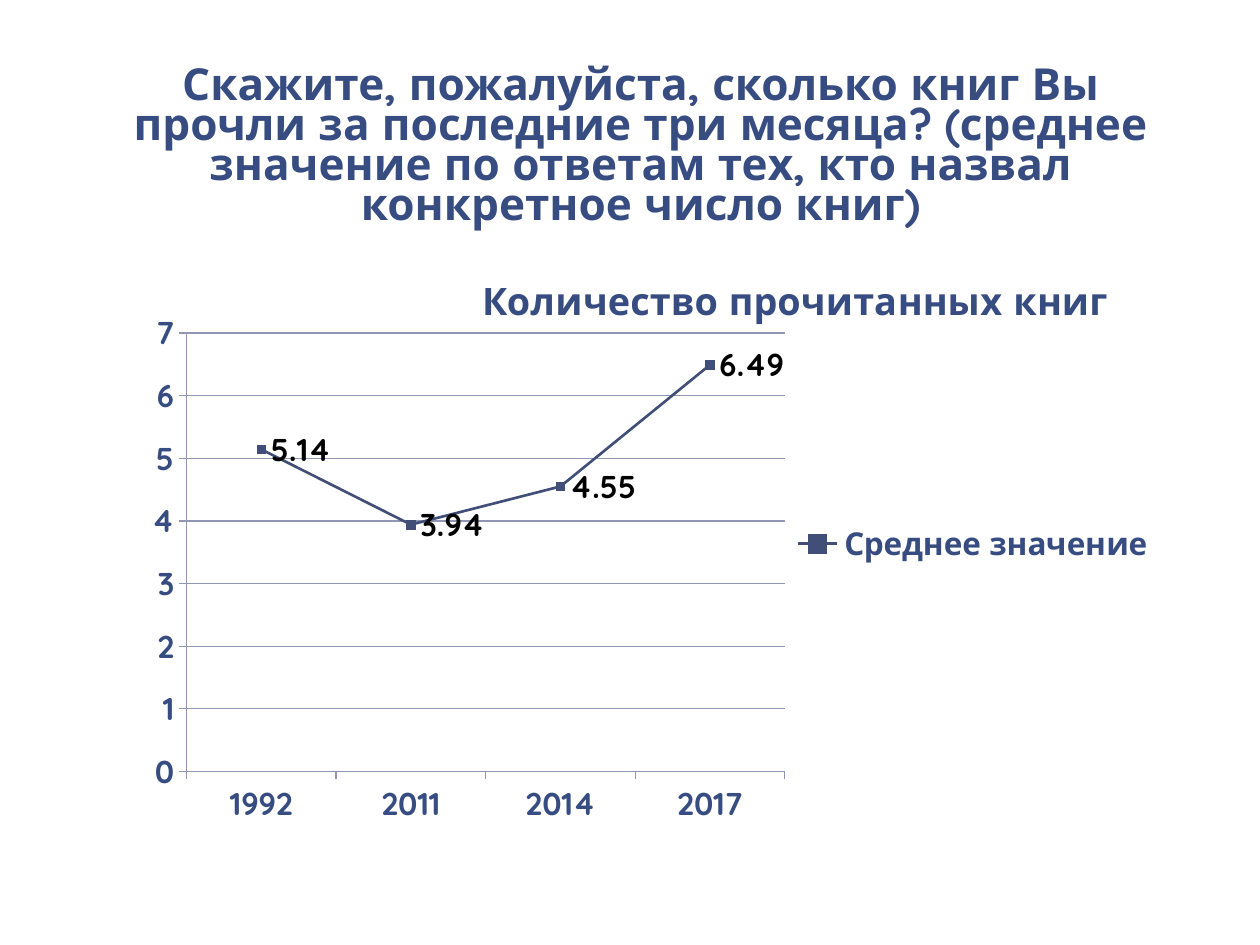
from dataclasses import dataclass

from lxml import etree
from pptx import Presentation
from pptx.chart.data import CategoryChartData
from pptx.dml.color import RGBColor
from pptx.enum import chart as chart_enum, text as text_enum
from pptx.oxml import ns
from pptx.util import Inches, Pt


@dataclass(frozen=True)
class Theme:
    font: str = "Quicksand"
    heading: str = "374C81"
    series: str = "414E77"
    grid: str = "9096B4"
    label: str = "000000"
    background: str = "FFFFFF"
    title_size: float = 25.2
    chart_title_size: float = 21.6
    chart_size: float = 18


THEME = Theme()


def format_font(font, size=THEME.chart_size, color=THEME.heading, bold=True):
    font.name = THEME.font
    font.size = Pt(size)
    font.bold = bold
    font.color.rgb = RGBColor.from_string(color)


def write_text(frame, content, align=text_enum.PP_ALIGN.CENTER, spacing=None, **font_format):
    paragraph = frame.paragraphs[0]
    paragraph.alignment = align
    paragraph.line_spacing = spacing
    run = paragraph.add_run()
    run.text = content
    format_font(run.font, **font_format)


def format_line(line, color, width):
    line.color.rgb = RGBColor.from_string(color)
    line.width = Pt(width)


def set_layout(parent, successor_tags, **values):
    """Place a chart part by fractions of the chart area."""
    for old in parent.findall(ns.qn("c:layout")):
        parent.remove(old)
    layout = etree.Element(ns.qn("c:layout"))
    manual = etree.SubElement(layout, ns.qn("c:manualLayout"))
    for tag, value in values.items():
        etree.SubElement(manual, ns.qn(f"c:{tag}")).set("val", str(value))
    successors = [child for child in parent
                  if child.tag in [ns.qn(tag) for tag in successor_tags]]
    successors[0].addprevious(layout)


def add_title(slide, content):
    title = slide.shapes.title
    title.left, title.top = Inches(0.92), Inches(0.55)
    title.width, title.height = Inches(8.33), Inches(1.33)
    frame = title.text_frame
    frame.word_wrap = True
    frame.auto_size = text_enum.MSO_AUTO_SIZE.NONE
    frame.vertical_anchor = text_enum.MSO_ANCHOR.BOTTOM
    frame.margin_left = frame.margin_right = Inches(0.13)
    frame.margin_top = frame.margin_bottom = Inches(0.07)
    write_text(frame, content, spacing=0.75, size=THEME.title_size)


def format_axis(axis):
    axis.major_tick_mark = chart_enum.XL_TICK_MARK.OUTSIDE
    axis.minor_tick_mark = chart_enum.XL_TICK_MARK.NONE
    format_font(axis.tick_labels.font)
    format_line(axis.format.line, THEME.grid, 0.75)


def format_series(series):
    series.smooth = False
    format_line(series.format.line, THEME.series, 1.5)
    marker = series.marker
    marker.style = chart_enum.XL_MARKER_STYLE.SQUARE
    marker.size = 5
    marker.format.fill.solid()
    marker.format.fill.fore_color.rgb = RGBColor.from_string(THEME.series)
    format_line(marker.format.line, THEME.series, 0.75)
    labels = series.data_labels
    labels.show_value = True
    labels.position = chart_enum.XL_LABEL_POSITION.RIGHT
    format_font(labels.font, color=THEME.label)


def add_line_chart(slide, heading, name, points):
    data = CategoryChartData()
    data.categories = list(points)
    data.add_series(name, list(points.values()))
    chart = slide.shapes.add_chart(
        chart_enum.XL_CHART_TYPE.LINE_MARKERS,
        Inches(0.94), Inches(1.87), Inches(8.33), Inches(4.89), data).chart
    format_font(chart.font, bold=False)

    # Chart title, shifted to the right of centre
    write_text(chart.chart_title.text_frame, heading, size=THEME.chart_title_size)
    chart.chart_title.include_in_layout = False
    set_layout(chart.chart_title._element, ["c:overlay"],
               xMode="edge", yMode="edge", x=0.34, y=0.05)

    # Axes and grid
    format_axis(chart.category_axis)
    value_axis = chart.value_axis
    format_axis(value_axis)
    value_axis.minimum_scale, value_axis.maximum_scale = 0, 7
    value_axis.major_unit = 1
    value_axis.tick_labels.number_format = "General"
    value_axis.tick_labels.number_format_is_linked = False
    value_axis.has_major_gridlines = True
    format_line(value_axis.major_gridlines.format.line, THEME.grid, 0.75)

    # Legend
    chart.has_legend = True
    chart.legend.position = chart_enum.XL_LEGEND_POSITION.RIGHT
    chart.legend.include_in_layout = False
    format_font(chart.legend.font)

    # Plot and series
    plot = chart.plots[0]
    plot.vary_by_categories = False
    set_layout(plot._element.getparent(), ["c:lineChart"], layoutTarget="inner",
               xMode="edge", yMode="edge", x=0.065, y=0.158, w=0.57, h=0.712)
    format_series(plot.series[0])


def main():
    presentation = Presentation()
    presentation.slide_width, presentation.slide_height = Inches(10), Inches(7.5)
    slide = presentation.slides.add_slide(presentation.slide_layouts[5])
    slide.background.fill.solid()
    slide.background.fill.fore_color.rgb = RGBColor.from_string(THEME.background)
    add_title(slide, "Скажите, пожалуйста, сколько книг Вы прочли за последние три месяца? "
                     "(среднее значение по ответам тех, кто назвал конкретное число книг)")
    add_line_chart(slide, "Количество прочитанных книг", "Среднее значение",
                   {"1992": 5.14, "2011": 3.94, "2014": 4.55, "2017": 6.49})
    presentation.save("out.pptx")


if __name__ == "__main__":
    main()
